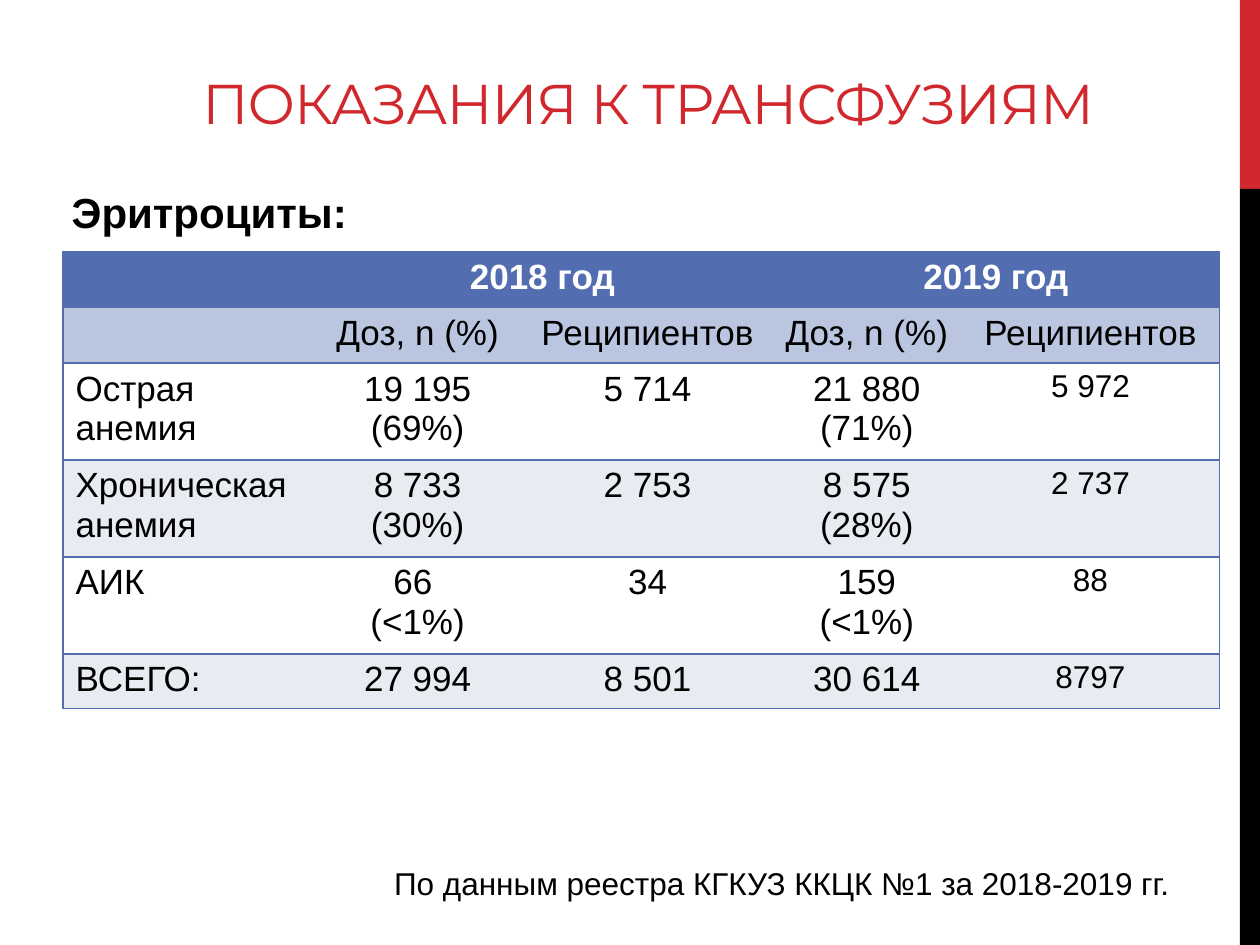
from dataclasses import dataclass

from lxml import etree
from pptx import Presentation
from pptx.dml.color import RGBColor
from pptx.enum.shapes import MSO_SHAPE
from pptx.enum.text import MSO_ANCHOR, MSO_AUTO_SIZE, PP_ALIGN
from pptx.oxml.ns import qn
from pptx.slide import Slide
from pptx.table import _Cell
from pptx.util import Inches, Pt

CENTER, LEFT = PP_ALIGN.CENTER, PP_ALIGN.LEFT
BOTTOM = MSO_ANCHOR.BOTTOM
RECTANGLE = MSO_SHAPE.RECTANGLE
FIT_SHAPE, NO_FIT = MSO_AUTO_SIZE.SHAPE_TO_FIT_TEXT, MSO_AUTO_SIZE.NONE
RED, BLACK, WHITE, BLUE = "D1282E", "000000", "FFFFFF", "526DB0"
SUBHEADER, BAND = "BAC5DF", "E9EBF2"


@dataclass
class Bar:
    top: float
    height: float
    color: str


@dataclass
class Label:
    text: str
    left: float
    top: float
    width: float
    height: float
    size: int
    bold: bool = False


@dataclass
class Row:
    values: list[str]
    height: float
    fill: str
    color: str = BLACK
    bold: bool = False
    last_size: int = 18


BARS = [Bar(0, 1.5, RED), Bar(1.5, 6, BLACK)]
LABELS = [
    Label("Эритроциты:", 0.47, 1.43, 2.41, 0.5, 24, True),
    Label("По данным реестра КГКУЗ ККЦК №1 за 2018-2019 гг.", 3.03, 6.81, 6.67, 0.4, 18),
]
COLUMN_WIDTHS = [1.98, 1.67, 1.98, 1.5, 2.05]
SINGLE, DOUBLE = 0.435, 0.77
ROWS = [
    Row(["", "2018 год", "", "2019 год", ""], SINGLE, BLUE, WHITE, True, 20),
    Row(["", "Доз, n (%)", "Реципиентов", "Доз, n (%)", "Реципиентов"], SINGLE, SUBHEADER, last_size=20),
    Row(["Острая анемия", "19 195 (69%)", "5 714", "21 880\n(71%)", "5 972"], DOUBLE, WHITE),
    Row(["Хроническая анемия", "8 733 (30%)", "2 753", "8 575\n(28%)", "2 737"], DOUBLE, BAND),
    Row(["АИК", "66 \n(<1%)", "34", "159\n(<1%)", "88"], DOUBLE, WHITE),
    Row(["ВСЕГО:", "27 994", "8 501", "30 614", "8797"], SINGLE, BAND),
]


def rgb(color: str) -> RGBColor:
    return RGBColor.from_string(color)


def format_text(text_frame, size: int, color: str, bold: bool = False,
                alignment=LEFT, font_name: str = "Arial") -> None:
    for paragraph in text_frame.paragraphs:
        paragraph.alignment = alignment
        paragraph.font.size = Pt(size)
        for run in paragraph.runs:
            run.font.name = font_name
            run.font.size = Pt(size)
            run.font.bold = bold
            run.font.color.rgb = rgb(color)


def add_bar(slide: Slide, bar: Bar) -> None:
    shape = slide.shapes.add_shape(
        RECTANGLE, Inches(9.84), Inches(bar.top), Inches(0.16), Inches(bar.height))
    shape.shadow.inherit = False
    shape.fill.solid()
    shape.fill.fore_color.rgb = rgb(bar.color)
    shape.line.fill.background()


def add_title(slide: Slide) -> None:
    title = slide.shapes.title
    title.left, title.top = Inches(0.5), Inches(0.17)
    title.width, title.height = Inches(9.29), Inches(0.96)
    text_frame = title.text_frame
    text_frame.text = "ПОКАЗАНИЯ К ТРАНСФУЗИЯМ"
    text_frame.vertical_anchor = BOTTOM
    text_frame.auto_size = NO_FIT
    format_text(text_frame, 32, RED, alignment=CENTER, font_name="Montserrat")
    text_frame.paragraphs[0].runs[0].font._element.set("spc", "-60")


def add_label(slide: Slide, label: Label) -> None:
    shape = slide.shapes.add_textbox(
        Inches(label.left), Inches(label.top), Inches(label.width), Inches(label.height))
    text_frame = shape.text_frame
    text_frame.text = label.text
    text_frame.word_wrap = False
    text_frame.auto_size = FIT_SHAPE
    format_text(text_frame, label.size, BLACK, label.bold)


def set_borders(cell: _Cell, visible_sides: str) -> None:
    properties = cell._tc.get_or_add_tcPr()
    for side in "LRTB":
        line = etree.SubElement(properties, qn(f"a:ln{side}"), w=str(Pt(1)))
        if side in visible_sides:
            fill = etree.SubElement(line, qn("a:solidFill"))
            etree.SubElement(fill, qn("a:srgbClr"), val=BLUE)
        else:
            etree.SubElement(line, qn("a:noFill"))


def add_indications_table(slide: Slide) -> None:
    table = slide.shapes.add_table(
        len(ROWS), len(COLUMN_WIDTHS), Inches(0.5), Inches(2),
        Inches(sum(COLUMN_WIDTHS)), Inches(sum(row.height for row in ROWS))).table
    table.first_row = table.horz_banding = False
    for column, width in zip(table.columns, COLUMN_WIDTHS):
        column.width = Inches(width)
    last = len(COLUMN_WIDTHS) - 1
    for row_index, row in enumerate(ROWS):
        table.rows[row_index].height = Inches(row.height)
        for column_index, value in enumerate(row.values):
            cell = table.cell(row_index, column_index)
            cell.text_frame.text = value
            size = row.last_size if column_index == last else 20
            alignment = CENTER if column_index else LEFT
            format_text(cell.text_frame, size, row.color, row.bold, alignment)
            set_borders(cell, "TB" + {0: "L", last: "R"}.get(column_index, ""))
            cell.fill.solid()
            cell.fill.fore_color.rgb = rgb(row.fill)
    for column_index in (1, 3):
        table.cell(0, column_index).merge(table.cell(0, column_index + 1))
        set_merged = table.cell(0, column_index)
        set_merged.text_frame.paragraphs[0].alignment = CENTER


def main() -> None:
    presentation = Presentation()
    presentation.slide_width, presentation.slide_height = Inches(10), Inches(7.5)
    slide = presentation.slides.add_slide(presentation.slide_layouts[5])
    for bar in BARS:
        add_bar(slide, bar)
    add_title(slide)
    add_indications_table(slide)
    for label in LABELS:
        add_label(slide, label)
    presentation.save("out.pptx")


if __name__ == "__main__":
    main()
